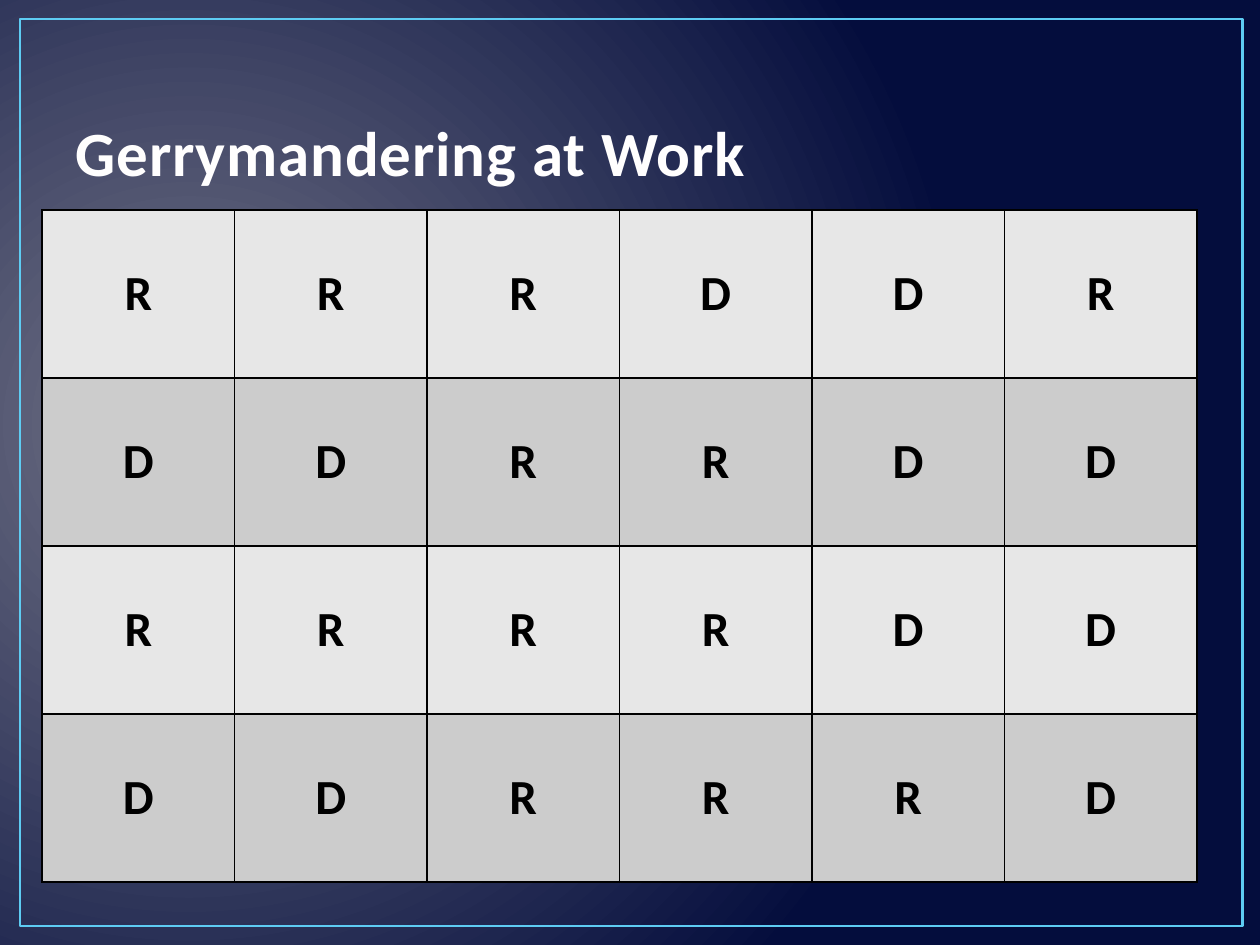
import pptx
import pptx.dml.color
import pptx.enum.shapes
import pptx.enum.text
import pptx.oxml
import pptx.oxml.ns
import pptx.util

Pt = pptx.util.Pt
qn = pptx.oxml.ns.qn
ALIGN = pptx.enum.text.PP_ALIGN
ANCHOR = pptx.enum.text.MSO_ANCHOR
NS = pptx.oxml.ns.nsdecls("a")

VOTES = ["RRRDDR", "DDRRDD", "RRRRDD", "DDRRRD"]
BANDS = ["E7E7E7", "CCCCCC"]


def color(code):
    return pptx.dml.color.RGBColor.from_string(code)


def line_xml(tag, code, width):
    return pptx.oxml.parse_xml(
        f'<a:{tag} {NS} w="{Pt(width)}"><a:solidFill><a:srgbClr val="{code}"/>'
        f'</a:solidFill></a:{tag}>')


def write(frame, text, size=28, fill="000000", align=ALIGN.CENTER):
    """Fill the frame with one bold run and return that run."""
    para = frame.paragraphs[0]
    para.alignment = align
    run = para.add_run()
    run.text = text
    run.font.name = "Calibri"
    run.font.size = Pt(size)
    run.font.bold = True
    run.font.color.rgb = color(fill)
    return run


def place(shape, box):
    shape.left, shape.top, shape.width, shape.height = map(Pt, box)


def paint_back(slide):
    fill = slide.background.fill
    fill.gradient()
    for stop, pos, code in zip(fill.gradient_stops, (0, 1), ("717386", "040D3D")):
        stop.position = pos
        stop.color.rgb = color(code)
    grad = next(slide.element.iter(qn("a:gradFill")))
    grad.replace(grad.find(qn("a:lin")), pptx.oxml.parse_xml(
        f'<a:path {NS} path="circle">'
        '<a:fillToRect l="15000" t="50000" r="85000" b="60000"/></a:path>'))


def add_frame(slide, box):
    frame = slide.shapes.add_shape(
        pptx.enum.shapes.MSO_SHAPE.RECTANGLE, *map(Pt, box))
    frame.shadow.inherit = False
    frame.fill.background()
    frame.line.color.rgb = color("5ECCF3")
    frame.line.width = Pt(1.5)
    # Keep the border behind the title
    slide.shapes.element.insert(2, frame.element)


def set_title(slide, box, text):
    title = slide.shapes.title
    place(title, box)
    title.text_frame.vertical_anchor = ANCHOR.BOTTOM
    run = write(title.text_frame, text, size=36, fill="FFFEFE", align=ALIGN.LEFT)
    props = run.font._element
    props.set("spc", "50")
    props.insert(0, line_xml("ln", "21306A", 1.05))


def edge(cell):
    props = cell._tc.get_or_add_tcPr()
    for i, side in enumerate(("lnL", "lnR", "lnT", "lnB")):
        props.insert(i, line_xml(side, "000000", 1))


def add_votes(slide, box, votes):
    left, top, width, height = box
    table = slide.shapes.add_table(
        len(votes), len(votes[0]), *map(Pt, box)).table
    for col in table.columns:
        col.width = Pt(width / len(votes[0]))
    for r, line in enumerate(votes):
        table.rows[r].height = Pt(height / len(votes))
        for c, vote in enumerate(line):
            cell = table.cell(r, c)
            cell.vertical_anchor = ANCHOR.MIDDLE
            cell.fill.solid()
            cell.fill.fore_color.rgb = color(BANDS[r % 2])
            edge(cell)
            write(cell.text_frame, vote)


def main():
    deck = pptx.Presentation()
    deck.slide_width, deck.slide_height = Pt(720), Pt(540)
    slide = deck.slides.add_slide(deck.slide_layouts[5])
    paint_back(slide)
    add_frame(slide, (11.5, 10.8, 698.4, 518.4))
    set_title(slide, (36, 21.6, 648, 90), "Gerrymandering at Work")
    add_votes(slide, (24, 120, 660, 384), VOTES)
    deck.save("out.pptx")


if __name__ == "__main__":
    main()
